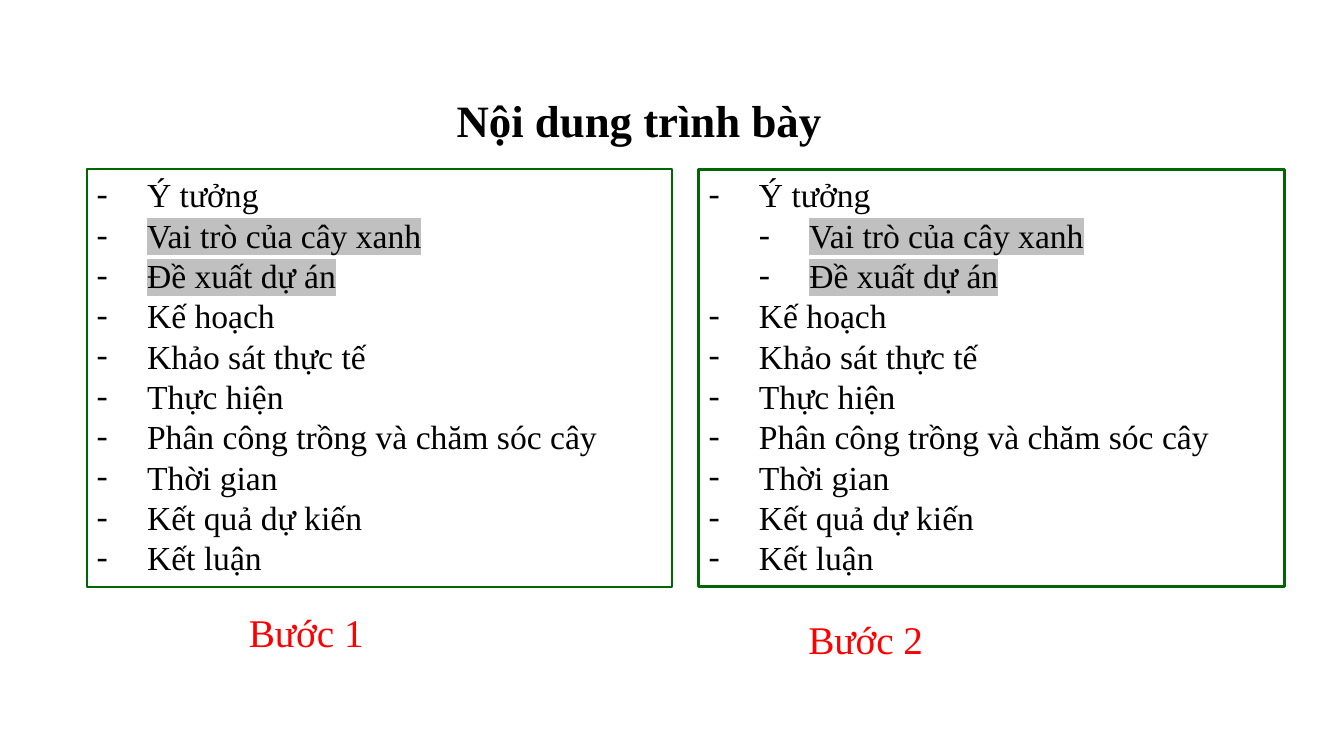
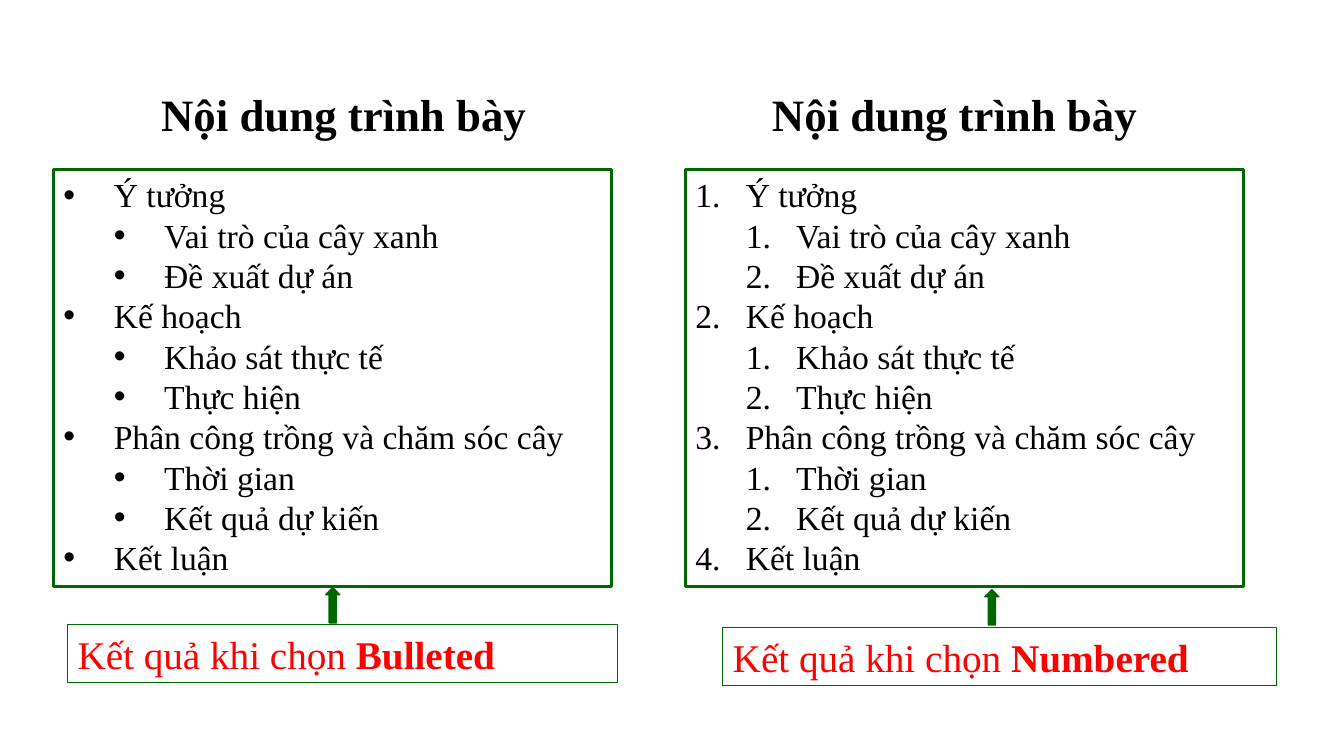
from dataclasses import dataclass

from lxml import etree
from pptx import Presentation
from pptx.dml.color import RGBColor
from pptx.enum.shapes import MSO_SHAPE
from pptx.enum.text import MSO_ANCHOR, MSO_AUTO_SIZE, PP_ALIGN
from pptx.oxml.ns import qn
from pptx.util import Inches, Pt

RECTANGLE = MSO_SHAPE.RECTANGLE
UP_ARROW = MSO_SHAPE.UP_ARROW
LEFT = PP_ALIGN.LEFT
JUSTIFY = PP_ALIGN.JUSTIFY
TOP = MSO_ANCHOR.TOP
FIT_SHAPE = MSO_AUTO_SIZE.SHAPE_TO_FIT_TEXT

BLACK = RGBColor(0x00, 0x00, 0x00)
RED = RGBColor(0xFF, 0x00, 0x00)
GREEN = RGBColor(0x00, 0x66, 0x00)
GRAY = RGBColor(0xC0, 0xC0, 0xC0)
FONT = "Times New Roman"

WIDTH, HEIGHT = Inches(13.33), Inches(7.5)
COLUMN, ROW = WIDTH / 100, HEIGHT / 100
INDENT = Inches(0.5)
LIST_TOP, LIST_HEIGHT = 22.4, 55.2
TITLE_WIDTH, TITLE_HEIGHT = 30.23, 8.53
CAPTION_HEIGHT = 7.6
STEP_WIDTH = 16.65
ARROW_WIDTH, ARROW_HEIGHT = 1.05, 4.67

TITLE = "Nội dung trình bày"
RESULT = "Kết quả khi chọn "
OUTLINE = (
    "Ý tưởng",
    "Vai trò của cây xanh",
    "Đề xuất dự án",
    "Kế hoạch",
    "Khảo sát thực tế",
    "Thực hiện",
    "Phân công trồng và chăm sóc cây",
    "Thời gian",
    "Kết quả dự kiến",
    "Kết luận",
)
IDEA_DETAILS = (1, 2)
ALL_DETAILS = (1, 2, 4, 5, 7, 8)


@dataclass(frozen=True)
class Marker:
    tag: str
    attribute: str
    value: str
    font: str


DASH = Marker("a:buChar", "char", "-", FONT)
DOT = Marker("a:buChar", "char", "•", "Arial")
NUMBER = Marker("a:buAutoNum", "type", "arabicPeriod", FONT)


@dataclass(frozen=True)
class Area:
    column: float
    row: float
    columns: float
    rows: float

    def emu(self) -> tuple[int, int, int, int]:
        return (round(self.column * COLUMN), round(self.row * ROW),
                round(self.columns * COLUMN), round(self.rows * ROW))


@dataclass(frozen=True)
class OutlineBox:
    column: float
    columns: float
    marker: Marker
    nested: tuple[int, ...] = ()
    highlighted: tuple[int, ...] = ()
    line_width: float = 2.25


@dataclass(frozen=True)
class Step:
    box: OutlineBox
    label: str
    column: float
    row: float


@dataclass(frozen=True)
class Result:
    box: OutlineBox
    title_column: float
    command: str
    caption_column: float
    caption_columns: float
    caption_row: float
    arrow_column: float
    arrow_row: float


STEPS = (
    Step(OutlineBox(6.45, 43.58, DASH, (), IDEA_DETAILS, 1.5), "Bước 1", 17.78, 79.87),
    Step(OutlineBox(51.98, 43.58, DASH, IDEA_DETAILS, IDEA_DETAILS), "Bước 2", 59.4, 80.8),
)
RESULTS = (
    Result(OutlineBox(3.98, 41.55, DOT, ALL_DETAILS), 11.25, "Bulleted",
           5.03, 40.95, 82.67, 24.23, 77.73),
    Result(OutlineBox(51, 41.55, NUMBER, ALL_DETAILS), 56.7, "Numbered",
           53.78, 41.18, 83.07, 73.28, 78),
)


def format_run(run, size: float, color: RGBColor, bold: bool = False) -> None:
    run.font.size = Pt(size)
    run.font.name = FONT
    run.font.bold = bold
    run.font.color.rgb = color


def highlight_run(run) -> None:
    fill = run._r.get_or_add_rPr().find(qn("a:solidFill"))
    highlight = etree.Element(qn("a:highlight"))
    etree.SubElement(highlight, qn("a:srgbClr"), val=str(GRAY))
    fill.addnext(highlight)


def add_marker(paragraph, marker: Marker, level: int) -> None:
    paragraph.level = level
    properties = paragraph._p.get_or_add_pPr()
    properties.set("marL", str(INDENT * (level + 1)))
    properties.set("indent", str(-INDENT))
    etree.SubElement(properties, qn("a:buFont"), typeface=marker.font)
    etree.SubElement(properties, qn(marker.tag)).set(marker.attribute, marker.value)


def prepare_text(shape):
    text_frame = shape.text_frame
    text_frame.word_wrap = True
    text_frame.auto_size = FIT_SHAPE
    text_frame.vertical_anchor = TOP
    return text_frame


def add_frame(slide, area: Area, line_width: float):
    shape = slide.shapes.add_shape(RECTANGLE, *area.emu())
    shape.shadow.inherit = False
    shape.fill.background()
    shape.line.color.rgb = GREEN
    shape.line.width = Pt(line_width)
    return prepare_text(shape)


def add_label(slide, area: Area, text: str, size: float, color: RGBColor,
              alignment: PP_ALIGN = LEFT, bold: bool = False) -> None:
    text_frame = prepare_text(slide.shapes.add_textbox(*area.emu()))
    text_frame.text = text
    paragraph = text_frame.paragraphs[0]
    paragraph.alignment = alignment
    format_run(paragraph.runs[0], size, color, bold)


def add_title(slide, column: float, row: float) -> None:
    add_label(slide, Area(column, row, TITLE_WIDTH, TITLE_HEIGHT),
              TITLE, 32, BLACK, JUSTIFY, True)


def add_outline(slide, box: OutlineBox) -> None:
    area = Area(box.column, LIST_TOP, box.columns, LIST_HEIGHT)
    text_frame = add_frame(slide, area, box.line_width)
    text_frame.text = "\n".join(OUTLINE)
    for index, paragraph in enumerate(text_frame.paragraphs):
        paragraph.alignment = JUSTIFY
        add_marker(paragraph, box.marker, int(index in box.nested))
        run = paragraph.runs[0]
        format_run(run, 24, BLACK)
        if index in box.highlighted:
            highlight_run(run)


def add_caption(slide, result: Result) -> None:
    area = Area(result.caption_column, result.caption_row,
                result.caption_columns, CAPTION_HEIGHT)
    paragraph = add_frame(slide, area, 0.75).paragraphs[0]
    paragraph.alignment = LEFT
    for text, bold in ((RESULT, False), (result.command, True)):
        run = paragraph.add_run()
        run.text = text
        format_run(run, 28, RED, bold)


def add_arrow(slide, column: float, row: float) -> None:
    area = Area(column, row, ARROW_WIDTH, ARROW_HEIGHT)
    arrow = slide.shapes.add_shape(UP_ARROW, *area.emu())
    arrow.shadow.inherit = False
    arrow.fill.solid()
    arrow.fill.fore_color.rgb = GREEN
    arrow.line.color.rgb = GREEN
    arrow.line.width = Pt(1)


def build_steps(slide) -> None:
    add_title(slide, 33.23, 11.6)
    for step in STEPS:
        add_outline(slide, step.box)
        add_label(slide, Area(step.column, step.row, STEP_WIDTH, CAPTION_HEIGHT),
                  step.label, 28, RED)


def build_results(slide) -> None:
    for result in RESULTS:
        add_title(slide, result.title_column, 10.8)
        add_caption(slide, result)
        add_outline(slide, result.box)
        add_arrow(slide, result.arrow_column, result.arrow_row)


def main() -> None:
    presentation = Presentation()
    presentation.slide_width, presentation.slide_height = WIDTH, HEIGHT
    blank_layout = presentation.slide_layouts[6]
    for build in (build_steps, build_results):
        build(presentation.slides.add_slide(blank_layout))
    presentation.save("out.pptx")


if __name__ == "__main__":
    main()
